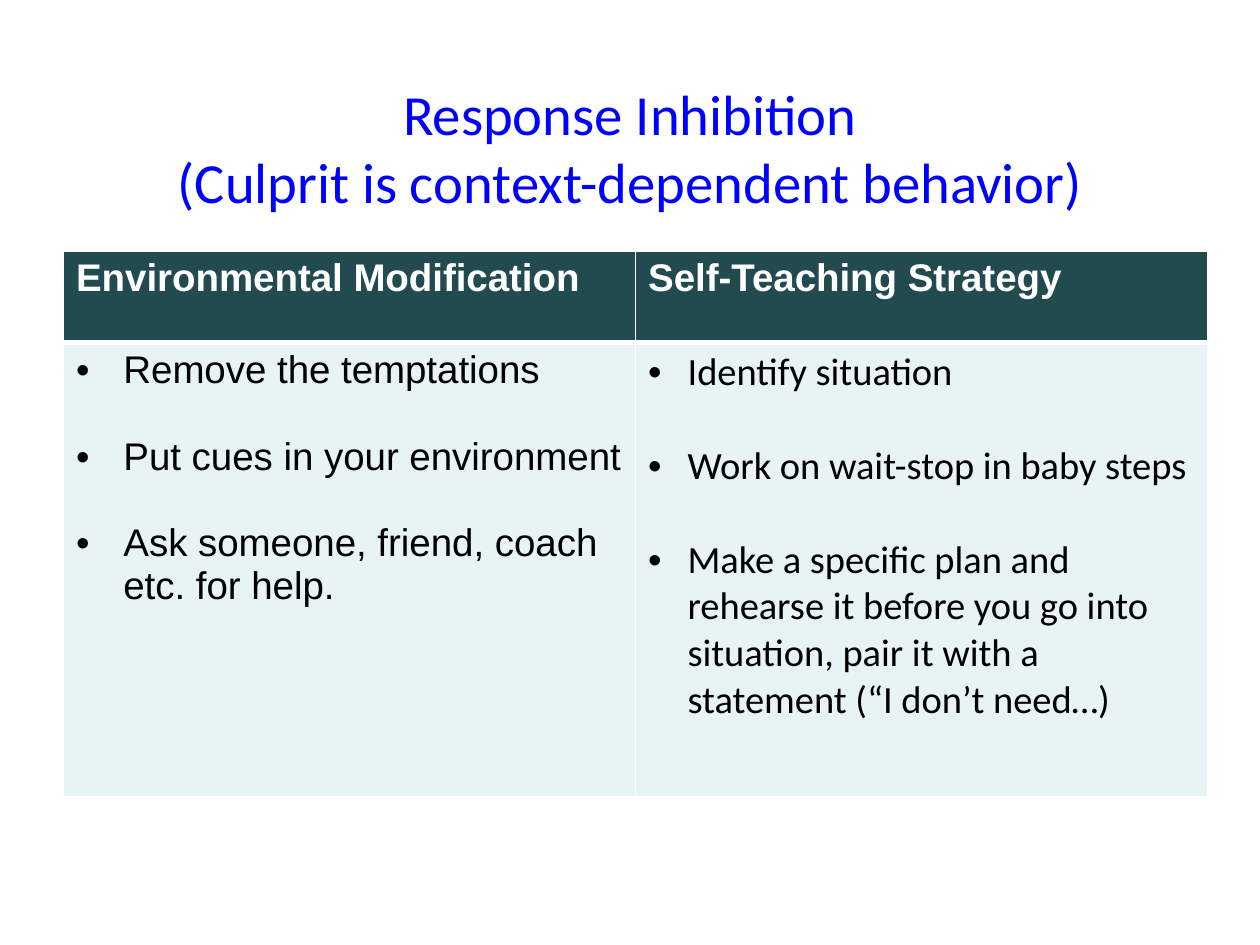
from lxml.etree import SubElement
from pptx import Presentation
from pptx.dml.color import RGBColor
from pptx.enum.text import MSO_ANCHOR, MSO_AUTO_SIZE, PP_ALIGN
from pptx.oxml.ns import qn
from pptx.util import Pt

COLORS = {"title": "0000FF", "header": "224B50", "body": "E7F3F4",
          "white": "FFFFFF", "black": "000000"}

COLUMNS = [
    {"heading": "Environmental Modification", "font": "Arial", "indent": 27, "gap": 24.6,
     "items": ["Remove the temptations",
               "Put cues in your environment",
               "Ask someone, friend, coach etc. for help."]},
    {"heading": "Self-Teaching Strategy", "font": "Calibri", "indent": 22.5, "gap": 26.8,
     "items": ["Identify situation",
               "Work on wait-stop in baby steps",
               "Make a specific plan and rehearse it before you go into situation, "
               "pair it with a statement (“I don’t need…)"]},
]


class SlideBuilder:
    text_size = 22
    title_size = 32.4

    def __init__(self, presentation):
        self.slide = presentation.slides.add_slide(presentation.slide_layouts[5])

    def style(self, paragraph, name, size, color, bold=False):
        font = paragraph.font
        font.name, font.size, font.bold = name, Pt(size), bold
        font.color.rgb = RGBColor.from_string(COLORS[color])

    def title(self, text, left, top, width, height):
        shape = self.slide.shapes.title
        shape.left, shape.top, shape.width, shape.height = map(Pt, (left, top, width, height))
        frame = shape.text_frame
        frame.text = text
        frame.auto_size = MSO_AUTO_SIZE.NONE
        frame.vertical_anchor = MSO_ANCHOR.MIDDLE
        paragraph = frame.paragraphs[0]
        paragraph.alignment = PP_ALIGN.CENTER
        self.style(paragraph, "Calibri", self.title_size, "title")

    def table(self, columns, left, top, width, row_heights):
        shape = self.slide.shapes.add_table(len(row_heights), len(columns), Pt(left), Pt(top),
                                            Pt(width), Pt(sum(row_heights)))
        table = shape.table
        table.first_row = table.horz_banding = False
        for row, height in zip(table.rows, row_heights):
            row.height = Pt(height)
        for index, column in enumerate(columns):
            self.header_cell(table.cell(0, index), column["heading"])
            self.list_cell(table.cell(1, index), column)

    def header_cell(self, cell, text):
        self.cell(cell, "header", top=1, bottom=3)
        cell.text = text
        self.style(cell.text_frame.paragraphs[0], "Arial", self.text_size, "white", True)

    def list_cell(self, cell, column):
        self.cell(cell, "body", top=3, bottom=1)
        frame = cell.text_frame
        for index, item in enumerate(column["items"]):
            paragraph = frame.add_paragraph() if index else frame.paragraphs[0]
            paragraph.text = item
            if index:
                paragraph.space_before = Pt(column["gap"])
            self.bullet(paragraph, column["indent"])
            self.style(paragraph, column["font"], self.text_size, "black")

    def bullet(self, paragraph, indent):
        properties = paragraph._p.get_or_add_pPr()
        properties.set("marL", str(Pt(indent)))
        properties.set("indent", str(-Pt(indent)))
        SubElement(properties, qn("a:buFont"), typeface="Arial")
        SubElement(properties, qn("a:buChar"), char="•")

    def cell(self, cell, fill, top, bottom):
        properties = cell._tc.get_or_add_tcPr()
        for side, width in (("L", 1), ("R", 1), ("T", top), ("B", bottom)):
            line = SubElement(properties, qn(f"a:ln{side}"), w=str(Pt(width)))
            solid = SubElement(line, qn("a:solidFill"))
            SubElement(solid, qn("a:srgbClr"), val=COLORS["white"])
        cell.fill.solid()
        cell.fill.fore_color.rgb = RGBColor.from_string(COLORS[fill])


def main():
    presentation = Presentation()
    presentation.slide_width, presentation.slide_height = Pt(720), Pt(540)
    builder = SlideBuilder(presentation)
    builder.title("Response Inhibition\v(Culprit is context-dependent behavior)", 54, 48, 612, 72)
    builder.table(COLUMNS, 36.3, 143.3, 653.8, [52.6, 259.2])
    presentation.save("out.pptx")


if __name__ == "__main__":
    main()
